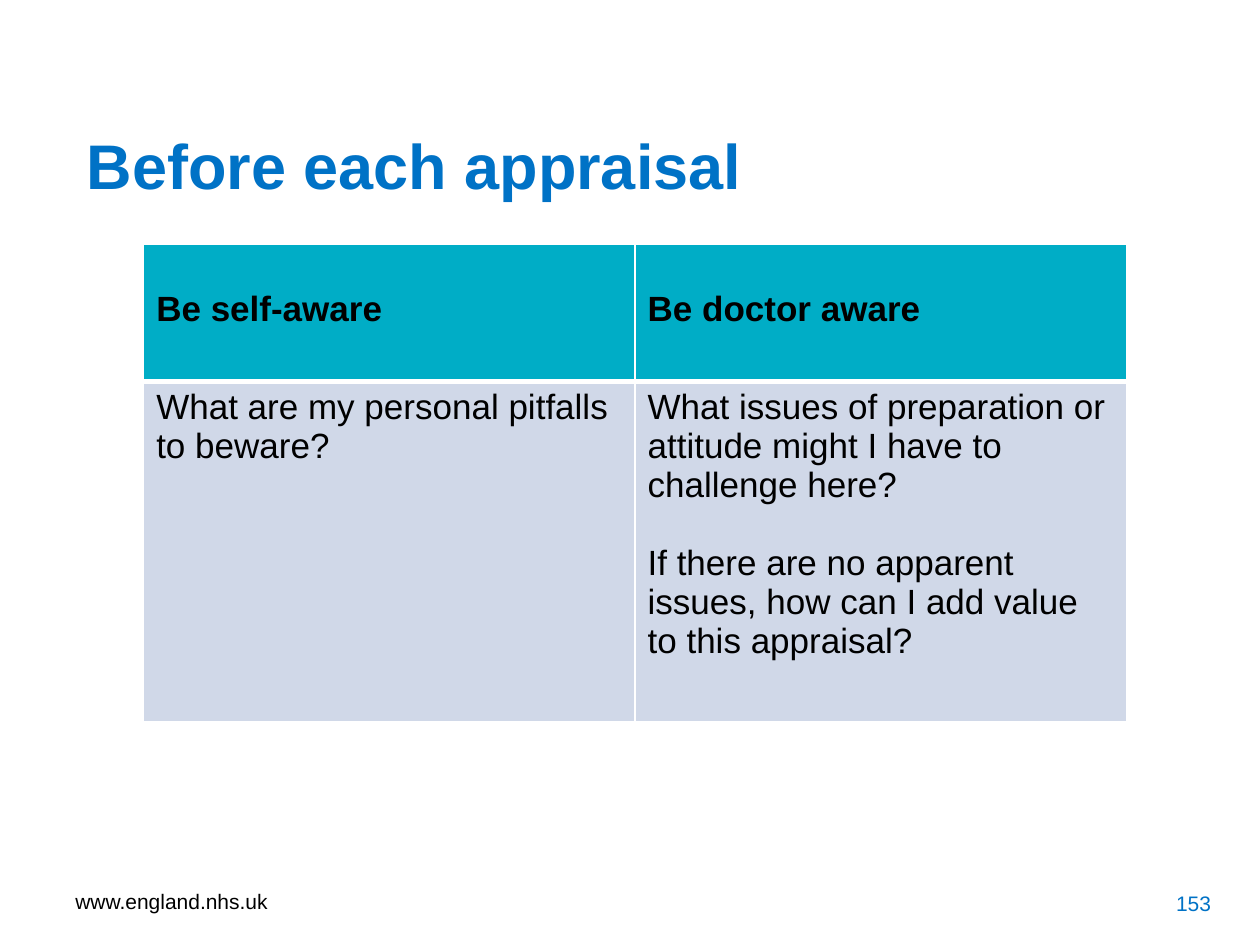
from pptx import Presentation
from pptx.dml.color import RGBColor
from pptx.enum.text import MSO_ANCHOR as Anchor, PP_ALIGN as Align
from pptx.oxml.ns import qn
from pptx.util import Inches, Pt
from lxml.etree import SubElement

FONT = "Arial"
COLORS = {
    "text": "000000",
    "blue": "0072C6",
    "header": "00ADC6",
    "body": "D0D8E8",
    "rule": "FFFFFF",
}
HEADINGS = ["Be self-aware", "Be doctor aware"]
QUESTIONS = [
    ["What are my personal pitfalls to beware?"],
    ["What issues of preparation or attitude might I have to challenge here?",
     "If there are no apparent issues, how can I add value to this appraisal?"],
]


def format_paragraph(paragraph, size, color, bold=False):
    for run in paragraph.runs:
        run.font.name = FONT
        run.font.size = Pt(size)
        run.font.bold = bold
        run.font.color.rgb = RGBColor.from_string(COLORS[color])


def add_label(slide, text, box, size, color, bold=False,
              anchor=Anchor.MIDDLE, align=Align.LEFT):
    frame = slide.shapes.add_textbox(*map(Inches, box)).text_frame
    frame.word_wrap = True
    frame.vertical_anchor = anchor
    frame.text = text
    frame.paragraphs[0].alignment = align
    format_paragraph(frame.paragraphs[0], size, color, bold)


def add_borders(cell, top, bottom):
    properties = cell._tc.get_or_add_tcPr()
    for side, width in (("L", 1), ("R", 1), ("T", top), ("B", bottom)):
        line = SubElement(properties, qn(f"a:ln{side}"), w=str(Pt(width)))
        fill = SubElement(line, qn("a:solidFill"))
        SubElement(fill, qn("a:srgbClr"), val=COLORS["rule"])


def fill_cell(cell, paragraphs, fill, top, bottom, bold=False):
    add_borders(cell, top, bottom)
    cell.fill.solid()
    cell.fill.fore_color.rgb = RGBColor.from_string(COLORS[fill])
    frame = cell.text_frame
    frame.text = "\n".join(paragraphs)
    for index, paragraph in enumerate(frame.paragraphs):
        if index:
            paragraph.space_before = Pt(22)
        format_paragraph(paragraph, 20, "text", bold)


def add_awareness_table(slide):
    box = map(Inches, (1.14, 1.94, 7.8, 3.79))
    table = slide.shapes.add_table(2, len(HEADINGS), *box).table
    table.horz_banding = False
    for row, height in zip(table.rows, (1.09, 2.7)):
        row.height = Inches(height)
    for column, (heading, questions) in enumerate(zip(HEADINGS, QUESTIONS)):
        header = table.cell(0, column)
        fill_cell(header, [heading], "header", top=1, bottom=3, bold=True)
        header.margin_top = Inches(0.36)
        fill_cell(table.cell(1, column), questions, "body", top=3, bottom=1)


def main():
    prs = Presentation()
    prs.slide_width, prs.slide_height = Inches(10), Inches(7.5)
    slide = prs.slides.add_slide(prs.slide_layouts[6])

    # Title
    add_label(slide, "Before each appraisal", (0.59, 0.67, 9.06, 0.98),
              36, "blue", bold=True, anchor=Anchor.BOTTOM)

    # Two kinds of awareness
    add_awareness_table(slide)

    # Footer: web address and page number
    add_label(slide, "www.england.nhs.uk", (0.5, 6.95, 2.33, 0.4), 12, "text")
    add_label(slide, "153", (7.38, 6.97, 2.33, 0.4), 12, "blue",
              align=Align.RIGHT)

    prs.save("out.pptx")


if __name__ == "__main__":
    main()
